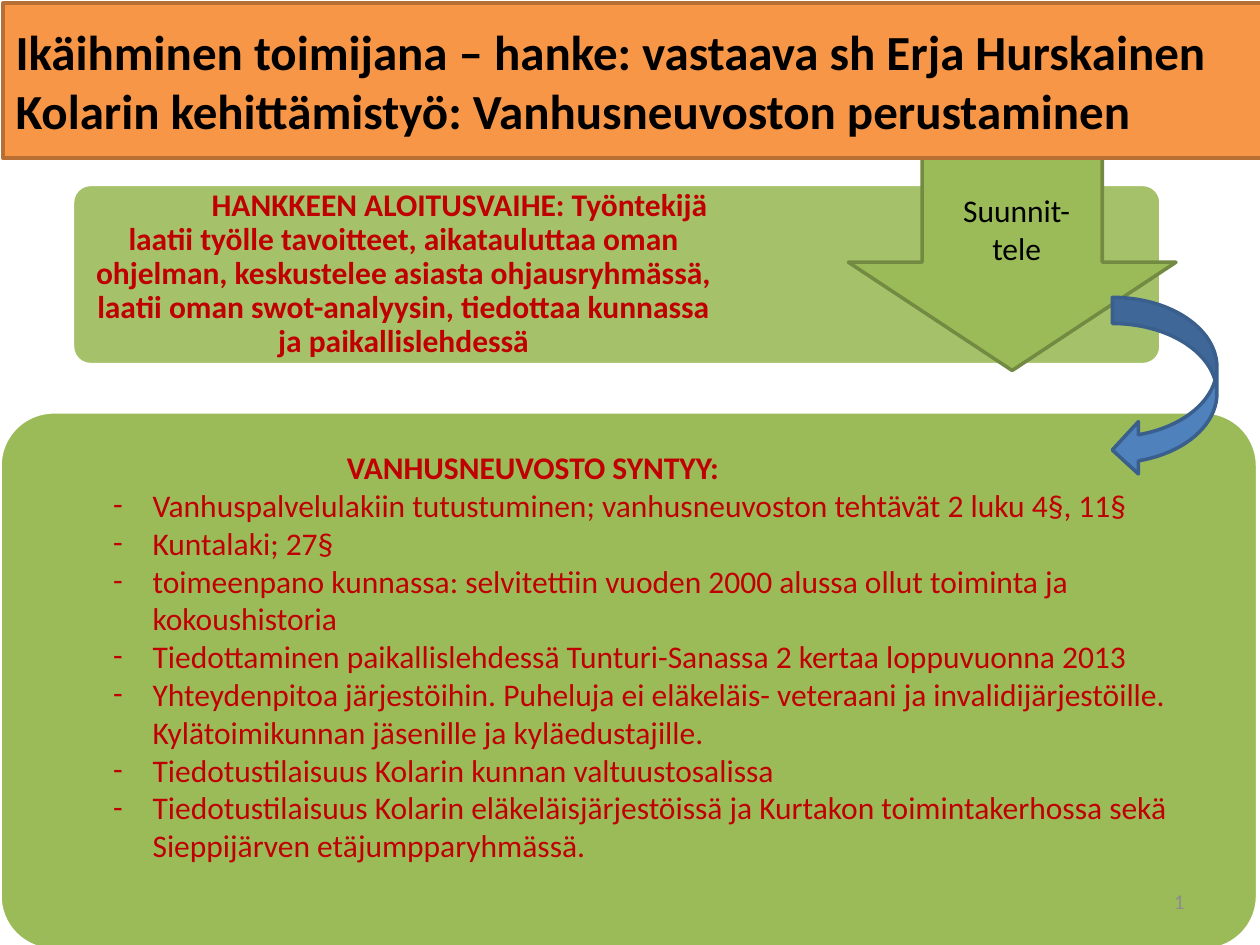
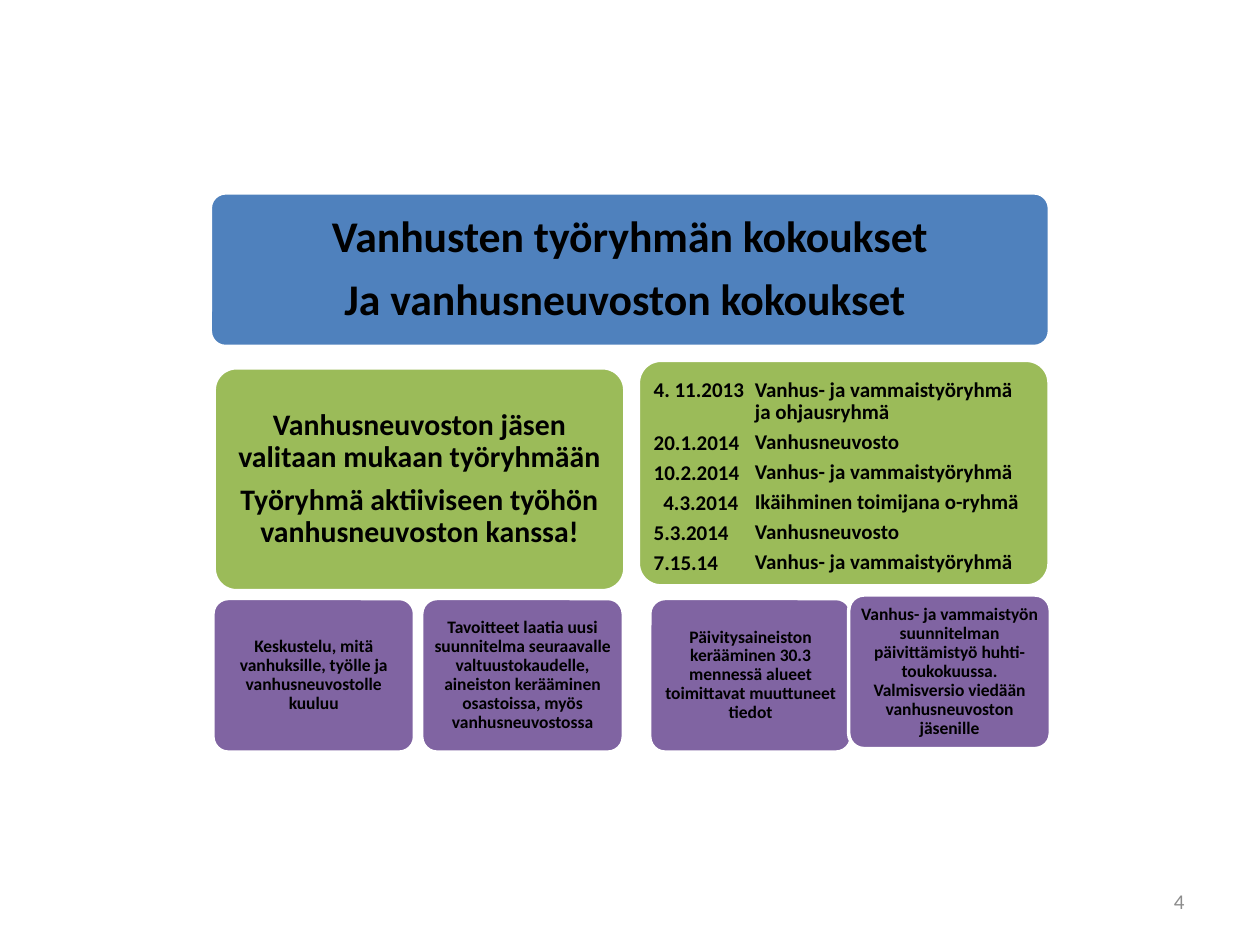
from dataclasses import dataclass

import pptx
import pptx.dml.color
import pptx.enum.shapes
import pptx.enum.text
import pptx.oxml
import pptx.oxml.ns
import pptx.presentation
import pptx.slide
import pptx.text.text
import pptx.util

Pt = pptx.util.Pt
Preset = pptx.enum.shapes.MSO_SHAPE
Align = pptx.enum.text.PP_ALIGN
Anchor = pptx.enum.text.MSO_ANCHOR

FONT = "Calibri"
COLORS = {
    "green": "9BBB59",
    "soft green": "A5C26A",
    "dark green": "738A42",
    "orange": "F79646",
    "dark orange": "B76F34",
    "blue": "4F81BD",
    "dark blue": "3A5F8C",
    "purple": "8064A2",
    "red": "C00000",
    "black": "000000",
    "white": "FFFFFF",
    "gray": "8C8C8C",
}


@dataclass(frozen=True)
class Line:
    text: str
    left: float = 0
    first: float = 0
    bullet: str = ""
    extra_after: float = 0
    bold: bool = True


@dataclass(frozen=True)
class TextStyle:
    size: float
    color: str = "black"
    align: Align = Align.LEFT
    anchor: Anchor = Anchor.MIDDLE
    spacing: float = 1.0
    after: float = 0
    insets: tuple[float, float, float, float] = (7.2, 3.6, 7.2, 3.6)


@dataclass(frozen=True)
class Block:
    box: tuple[float, float, float, float]
    preset: Preset | None = None
    fill: str = ""
    outline: str = "white"
    adjustments: tuple[float, ...] = ()
    lines: tuple[Line, ...] = ()
    style: TextStyle | None = None


def rgb(name: str) -> pptx.dml.color.RGBColor:
    return pptx.dml.color.RGBColor.from_string(COLORS[name])


def add_line(paragraph: pptx.text.text._Paragraph, line: Line, style: TextStyle) -> None:
    paragraph.alignment = style.align
    paragraph.line_spacing = style.spacing
    paragraph.space_after = Pt(style.after + line.extra_after)
    properties = paragraph._p.get_or_add_pPr()
    properties.set("marL", str(Pt(line.left)))
    properties.set("indent", str(Pt(line.first)))
    if line.bullet:
        namespace = pptx.oxml.ns.nsdecls("a")
        for tag in (f'buFont {namespace} typeface="{FONT}"', f'buChar {namespace} char="{line.bullet}"'):
            properties.append(pptx.oxml.parse_xml(f"<a:{tag}/>"))
    for index, part in enumerate(line.text.split("\n")):
        if index:
            paragraph.add_line_break()
        run = paragraph.add_run()
        run.text = part
        run.font.name = FONT
        run.font.size = Pt(style.size)
        run.font.bold = line.bold
        run.font.color.rgb = rgb(style.color)


def add_block(slide: pptx.slide.Slide, block: Block) -> None:
    box = [Pt(value) for value in block.box]
    if block.preset is None:
        shape = slide.shapes.add_textbox(*box)
    else:
        shape = slide.shapes.add_shape(block.preset, *box)
        shape.shadow.inherit = False
        shape.fill.solid()
        shape.fill.fore_color.rgb = rgb(block.fill)
        shape.line.color.rgb = rgb(block.outline)
        shape.line.width = Pt(2)
        for index, value in enumerate(block.adjustments):
            shape.adjustments[index] = value
    if block.style is None:
        return
    frame = shape.text_frame
    frame.word_wrap = True
    frame.vertical_anchor = block.style.anchor
    frame.margin_left, frame.margin_top, frame.margin_right, frame.margin_bottom = (
        Pt(inset) for inset in block.style.insets)
    for index, line in enumerate(block.lines):
        paragraph = frame.add_paragraph() if index else frame.paragraphs[0]
        add_line(paragraph, line, block.style)


def panel(box: tuple[float, float, float, float], fill: str,
          lines: tuple[Line, ...] = (), style: TextStyle | None = None) -> Block:
    return Block(box, Preset.ROUNDED_RECTANGLE, fill, adjustments=(0.1,), lines=lines, style=style)


def panel_style(size: float, insets: tuple[float, float, float, float], color: str = "black",
                align: Align = Align.CENTER, anchor: Anchor = Anchor.MIDDLE) -> TextStyle:
    return TextStyle(size, color, align, anchor, 0.9, round(size * 0.35, 2), insets)


def page_number(number: str) -> Block:
    return Block((516, 500.5, 168, 28.8), lines=(Line(number, bold=False),),
                 style=TextStyle(12, "gray", Align.RIGHT))


def add_slide(presentation: pptx.presentation.Presentation, blocks: list[Block], number: str) -> None:
    slide = presentation.slides.add_slide(presentation.slide_layouts[6])
    for block in [*blocks, page_number(number)]:
        add_block(slide, block)


def founding_blocks() -> list[Block]:
    start = Line("HANKKEEN ALOITUSVAIHE: Työntekijä laatii työlle tavoitteet, aikatauluttaa oman "
                 "ohjelman, keskustelee asiasta ohjausryhmässä, laatii oman swot-analyysin, "
                 "tiedottaa kunnassa ja paikallislehdessä", first=64)
    title = (Line("Ikäihminen toimijana – hanke: vastaava sh Erja Hurskainen"),
             Line("Kolarin kehittämistyö: Vanhusneuvoston perustaminen"))
    steps = (
        "Vanhuspalvelulakiin tutustuminen; vanhusneuvoston tehtävät 2 luku 4§, 11§",
        "Kuntalaki; 27§",
        "toimeenpano kunnassa: selvitettiin vuoden 2000 alussa ollut toiminta ja kokoushistoria",
        "Tiedottaminen paikallislehdessä Tunturi-Sanassa 2 kertaa loppuvuonna 2013",
        "Yhteydenpitoa järjestöihin. Puheluja ei eläkeläis- veteraani ja invalidijärjestöille. "
        "Kylätoimikunnan jäsenille ja kyläedustajille.",
        "Tiedotustilaisuus Kolarin kunnan valtuustosalissa",
        "Tiedotustilaisuus Kolarin eläkeläisjärjestöissä ja Kurtakon toimintakerhossa sekä "
        "Sieppijärven etäjumpparyhmässä.",
    )
    story = (Line("VANHUSNEUVOSTO SYNTYY:", left=133.5),
             *(Line(step, 22.5, -22.5, "-", bold=False) for step in steps))
    plan = (Line("Suunnit-", bold=False), Line("tele", bold=False))
    return [
        panel((41.4, 105.4, 622, 103), "soft green", (start,),
              panel_style(18, (5, 5, 248.5, 5), "red")),
        Block((484.8, 74.2, 187.2, 137.5), Preset.DOWN_ARROW, "green", "dark green", (0.55, 0.45)),
        Block((1.8, 1.8, 720, 88.6), Preset.RECTANGLE, "orange", "dark orange",
              lines=title, style=TextStyle(28)),
        panel((0, 235.4, 718.6, 307.4), "green"),
        Block((57.6, 252.6, 637.2, 260), lines=story,
              style=TextStyle(18, "red", anchor=Anchor.TOP)),
        Block((635.6, 169.9, 59.8, 102.2), Preset.CURVED_LEFT_ARROW, "blue", "dark blue"),
        Block((541.4, 105.8, 79.2, 51.1), lines=plan,
              style=TextStyle(18, align=Align.CENTER, anchor=Anchor.TOP)),
    ]


def meeting_blocks() -> list[Block]:
    heading = (Line("Vanhusten työryhmän kokoukset"), Line("Ja vanhusneuvoston kokoukset "))
    group = (Line("Vanhusneuvoston jäsen valitaan mukaan työryhmään"),
             Line("Työryhmä aktiiviseen työhön vanhusneuvoston kanssa!"))
    dates = (
        Line("4. 11.2013", extra_after=13.2),
        Line("20.1.2014"),
        Line("10.2.2014"),
        Line("4.3.2014", first=5.5),
        Line("5.3.2014"),
        Line("7.15.14"),
    )
    meetings = tuple(Line(name) for name in (
        "Vanhus- ja vammaistyöryhmä\nja ohjausryhmä",
        "Vanhusneuvosto",
        "Vanhus- ja vammaistyöryhmä",
        "Ikäihminen toimijana o-ryhmä",
        "Vanhusneuvosto",
        "Vanhus- ja vammaistyöryhmä",
    ))
    tasks = (
        (121.7, 342, "Keskustelu, mitä vanhuksille, työlle ja vanhusneuvostolle kuuluu"),
        (241, 342, "Tavoitteet laatia uusi suunnitelma seuraavalle valtuustokaudelle, "
                   "aineiston kerääminen osastoissa, myös vanhusneuvostossa"),
        (371.3, 342, "Päivitysaineiston kerääminen 30.3 mennessä alueet toimittavat "
                     "muuttuneet tiedot"),
        (485, 340, "Vanhus- ja vammaistyön suunnitelman päivittämistyö huhti-toukokuussa. "
                   "Valmisversio viedään vanhusneuvoston jäsenille"),
    )
    task_style = panel_style(10, (3, 3, 3, 3))
    date_style = panel_style(12, (5, 7, 5, 0), align=Align.LEFT, anchor=Anchor.TOP)
    meeting_style = panel_style(12, (0, 7, 0, 0), align=Align.LEFT, anchor=Anchor.TOP)
    return [
        panel((120.2, 110.2, 479.5, 87.8), "blue", heading, panel_style(25, (7, 7, 7, 7))),
        panel((122.4, 210.2, 234.7, 127.4), "green", group, panel_style(17, (5, 5, 5, 5))),
        panel((364.8, 205.9, 234.7, 128.9), "green", dates, date_style),
        Block((431.4, 209.6, 164, 121.4), lines=meetings, style=meeting_style),
        *(panel((left, top, 115.2, 87.8), "purple", (Line(text),), task_style)
          for left, top, text in tasks),
    ]


def main() -> None:
    presentation = pptx.Presentation()
    presentation.slide_width = Pt(720)
    presentation.slide_height = Pt(540)
    add_slide(presentation, founding_blocks(), "1")
    add_slide(presentation, meeting_blocks(), "4")
    presentation.save("out.pptx")


if __name__ == "__main__":
    main()
